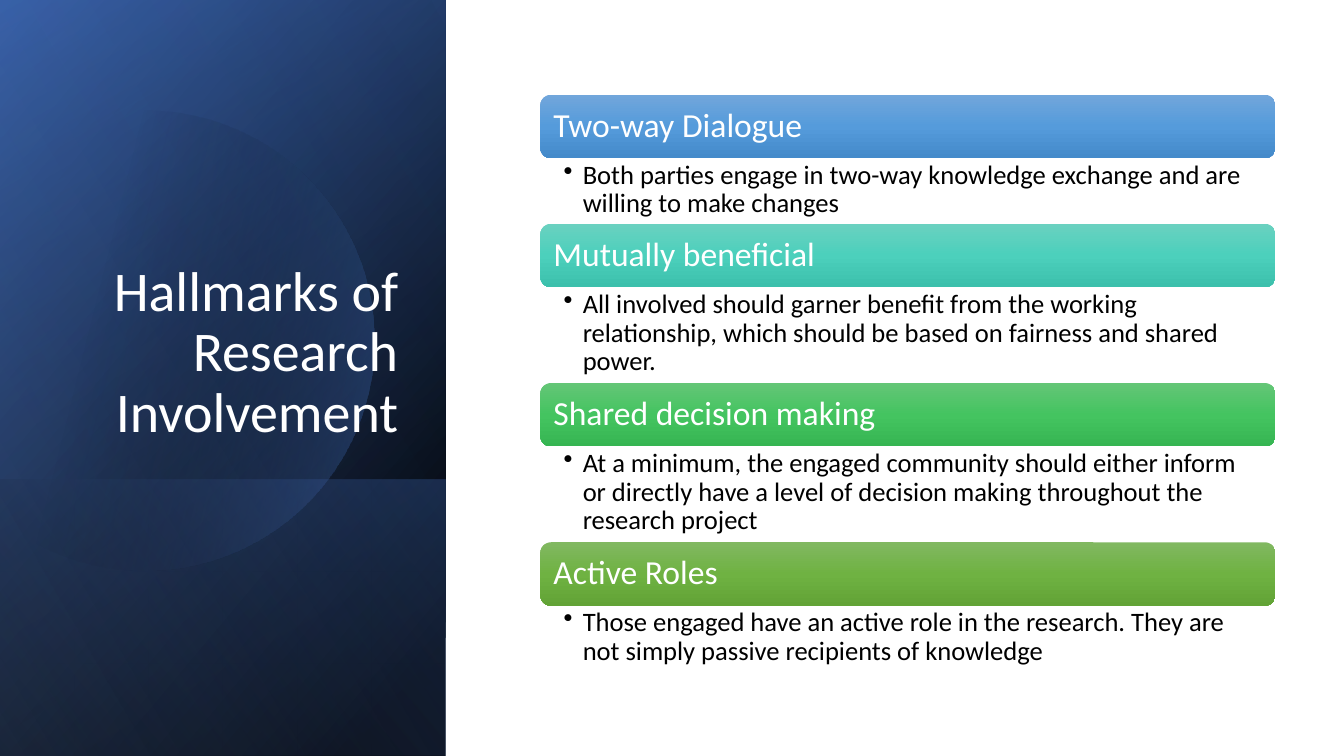
"""Build the Hallmarks of Research Involvement slide."""
from math import acos, cos, sin

from pptx import Presentation
from pptx.dml.color import RGBColor
from pptx.enum.shapes import MSO_SHAPE
from pptx.enum.text import MSO_ANCHOR, MSO_AUTO_SIZE, PP_ALIGN
from pptx.oxml import parse_xml
from pptx.oxml.ns import nsdecls, qn
from pptx.oxml.xmlchemy import OxmlElement
from pptx.util import Pt

PX = 9144
FONT = "Calibri"
COLORS = {
    "black": "000000", "white": "FFFFFF",
    "navy": "2F5597", "blue": "4472C4", "pale": "8FAADC",
    "dialogue": ("71A6DB", "559BDB", "448ACA"),
    "benefit": ("6AD1C0", "4CD0BC", "3CC0AC"),
    "decision": ("64C677", "44C460", "36B552"),
    "roles": ("81B861", "6FB242", "62A336"),
}


def paint(shape, stops, angle):
    """Give a shape a borderless gradient from (position, hex, opacity) stops."""
    shape.shadow.inherit = False
    shape.line.fill.background()
    shape.fill.gradient()
    stops_xml = "".join(
        f'<a:gs pos="{position * 1000}"><a:srgbClr val="{color}">'
        f'<a:alpha val="{opacity * 1000}"/></a:srgbClr></a:gs>'
        for position, color, opacity in stops)
    gradient = parse_xml(
        f'<a:gradFill {nsdecls("a")} rotWithShape="1"><a:gsLst>{stops_xml}</a:gsLst>'
        f'<a:lin ang="{angle * 60000}" scaled="0"/></a:gradFill>')
    properties = shape.element.spPr
    properties.replace(properties.find(qn("a:gradFill")), gradient)


def write(shape, text, size, color, anchor, margins, align=PP_ALIGN.LEFT):
    """Put one formatted paragraph in a shape and return the paragraph."""
    frame = shape.text_frame
    frame.word_wrap = True
    frame.auto_size = MSO_AUTO_SIZE.NONE
    frame.vertical_anchor = anchor
    frame.margin_left, frame.margin_top, frame.margin_right, frame.margin_bottom = (
        margin * PX for margin in margins)
    paragraph = frame.paragraphs[0]
    paragraph.alignment = align
    paragraph.line_spacing = 0.9
    run = paragraph.add_run()
    run.text = text
    run.font.name = FONT
    run.font.size = Pt(size)
    run.font.color.rgb = RGBColor.from_string(COLORS[color])
    return paragraph


deck = Presentation()
deck.slide_width, deck.slide_height = 1333 * PX, 750 * PX
slide = deck.slides.add_slide(deck.slide_layouts[5])
shapes = slide.shapes

full_panel = (-154, 154, 750, 442)
lower_panel = (84, 392, 274, 442)
black, navy, blue, pale = (COLORS[name] for name in ("black", "navy", "blue", "pale"))
panel_layers = [
    (full_panel, [(8, black, 100), (100, navy, 100)], 50),
    (full_panel, [(0, black, 0), (99, blue, 46)], 30),
    (lower_panel, [(2, blue, 29), (100, black, 30)], 130),
    ("disc", [(29, black, 0), (100, blue, 43)], 14),
    (full_panel, [(0, black, 0), (99, pale, 11)], 120),
]

center_x, center_y, radius, arc_steps = 143, 338, 228, 90
arc_end = acos(-center_x / radius)
arc_angles = [arc_end * (2 * step / arc_steps - 1) for step in range(arc_steps + 1)]
disc_edge = [((center_x + radius * cos(angle)) * PX, (center_y + radius * sin(angle)) * PX)
             for angle in arc_angles]

for area, stops, angle in panel_layers:
    if area == "disc":
        outline = shapes.build_freeform(*disc_edge[0])
        outline.add_line_segments(disc_edge[1:], close=True)
        layer = outline.convert_to_shape()
    else:
        layer = shapes.add_shape(MSO_SHAPE.RECTANGLE, *(length * PX for length in area))
        layer.rotation = 90
        layer.element.spPr.xfrm.set("flipH", "1")
    paint(layer, stops, angle)

title = shapes.title
title.left, title.top, title.width, title.height = (
    length * PX for length in (64, 184, 341, 262))
write(title, "Hallmarks of Research Involvement", 40, "white",
      MSO_ANCHOR.BOTTOM, (10, 5, 10, 5), PP_ALIGN.RIGHT)
title.element.getparent().append(title.element)

hallmarks = [
    ("Two-way Dialogue", "dialogue", 65,
     "Both parties engage in two-way knowledge exchange and are willing to make changes"),
    ("Mutually beneficial", "benefit", 95,
     "All involved should garner benefit from the working relationship, "
     "which should be based on fairness and shared power."),
    ("Shared decision making", "decision", 95,
     "At a minimum, the engaged community should either inform or directly have "
     "a level of decision making throughout the research project"),
    ("Active Roles", "roles", 65,
     "Those engaged have an active role in the research. "
     "They are not simply passive recipients of knowledge"),
]
left, top, width, heading_height = 536, 94, 729, 63

for heading, palette, detail_height, detail in hallmarks:
    bar = shapes.add_shape(MSO_SHAPE.ROUNDED_RECTANGLE, left * PX, top * PX,
                           width * PX, heading_height * PX)
    paint(bar, [(position, color, 100)
                for position, color in zip((0, 50, 100), COLORS[palette])], 90)
    write(bar, heading, 24, "white", MSO_ANCHOR.MIDDLE, (10, 10, 10, 10))
    top += heading_height

    explanation = shapes.add_textbox(left * PX, top * PX, width * PX, detail_height * PX)
    paragraph = write(explanation, detail, 19, "black", MSO_ANCHOR.TOP, (23, 3, 19, 3))
    paragraph.level = 1
    indents = paragraph._p.get_or_add_pPr()
    indents.set("marL", str(19 * PX))
    indents.set("indent", str(-19 * PX))
    bullet = OxmlElement("a:buChar")
    bullet.set("char", "•")
    indents.append(bullet)
    top += detail_height

deck.save("out.pptx")
